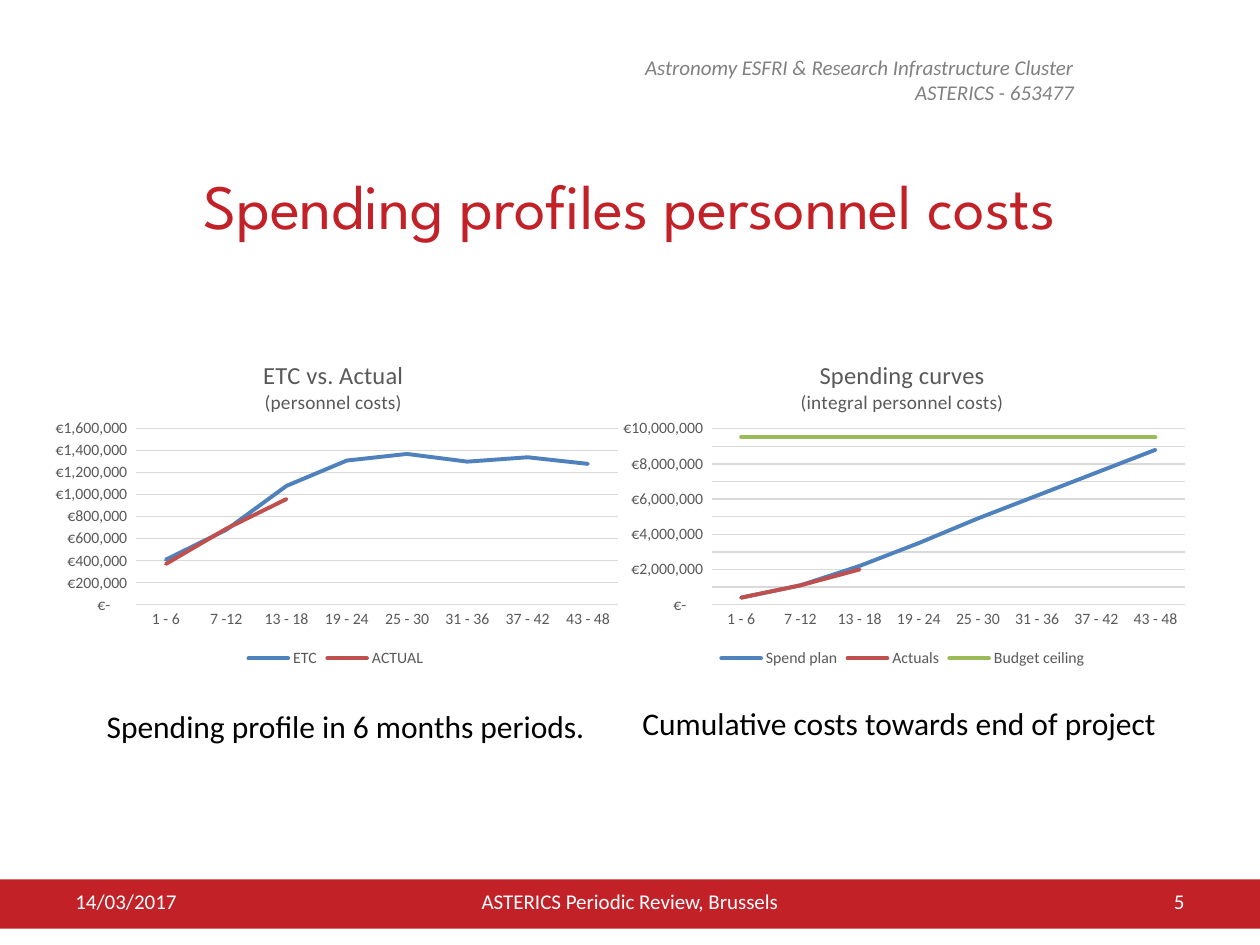
import pptx
import pptx.chart.data
import pptx.dml.color
import pptx.enum.chart
import pptx.enum.shapes
import pptx.enum.text
import pptx.oxml
import pptx.util
from pptx.util import Cm, Pt

THEME = {
    "red": "C32128",
    "grid": "D9D9D9",
    "series": ["4F81BD", "C0504D", "9BBB59"],
    "header": {"name": "Calibri", "size": Pt(12), "italic": True, "color": "808080"},
    "title": {"name": "League Spartan", "size": Pt(36), "color": "C32128"},
    "footer": {"name": "Calibri", "size": Pt(12), "color": "FFFFFF"},
    "caption": {"name": "Calibri", "size": Pt(18), "color": "000000"},
    "chart": {"name": "Calibri", "size": Pt(10), "color": "000000"},
    "label": {"name": "Calibri", "size": Pt(9), "color": "595959"},
    "chart title": {"name": "Calibri", "size": Pt(14), "bold": False, "color": "595959"},
    "chart subtitle": {"name": "Calibri", "size": Pt(11), "bold": False, "color": "595959"},
}
EURO_FORMAT = r'_("€"* #,##0_);_("€"* \(#,##0\);_("€"* "-"??_);_(@_)'
ALIGN = pptx.enum.text.PP_ALIGN
ANCHOR = pptx.enum.text.MSO_ANCHOR
XL = pptx.enum.chart
rgb = pptx.dml.color.RGBColor.from_string


def style_font(font, style):
    for key, value in THEME[style].items():
        if key == "color":
            font.color.rgb = rgb(value)
        else:
            setattr(font, key, value)


def layout_xml(target, **fractions):
    """Return a manual chart layout given as fractions of the chart area."""
    namespace = "http://schemas.openxmlformats.org/drawingml/2006/chart"
    parts = [("layoutTarget", target)] if target else []
    parts += [("xMode", "edge"), ("yMode", "edge"), *fractions.items()]
    inner = "".join(f'<c:{name} val="{value}"/>' for name, value in parts)
    return pptx.oxml.parse_xml(
        f'<c:layout xmlns:c="{namespace}"><c:manualLayout>{inner}</c:manualLayout></c:layout>')


deck = pptx.Presentation()
deck.slide_width, deck.slide_height = Cm(25.4), Cm(19.05)
page = deck.slides.add_slide(deck.slide_layouts[6])

# Footer band
band = page.shapes.add_shape(
    pptx.enum.shapes.MSO_SHAPE.RECTANGLE, 0, Cm(17.73), deck.slide_width, Cm(0.99))
band.shadow.inherit = False
band.fill.solid()
band.fill.fore_color.rgb = rgb(THEME["red"])
band.line.fill.background()

# Texts: style, lines, left, top, width, height, alignment, anchor
texts = [
    ("header", ["Astronomy ESFRI & Research Infrastructure Cluster", "ASTERICS - 653477"],
     11.1, 0.97, 10.8, 1.27, ALIGN.RIGHT, ANCHOR.TOP),
    ("title", ["Spending profiles personnel costs"],
     1.27, 2.92, 22.86, 2.39, ALIGN.CENTER, ANCHOR.MIDDLE),
    ("footer", ["14/03/2017"], 1.27, 17.65, 5.92, 1.02, ALIGN.LEFT, ANCHOR.MIDDLE),
    ("footer", ["ASTERICS Periodic Review, Brussels"],
     8.68, 17.65, 8.04, 1.02, ALIGN.CENTER, ANCHOR.MIDDLE),
    ("footer", ["5"], 18.21, 17.65, 5.92, 1.02, ALIGN.RIGHT, ANCHOR.MIDDLE),
    ("caption", ["Spending profile in 6 months periods."],
     1.9, 14.12, 10.8, 1.02, ALIGN.LEFT, ANCHOR.TOP),
    ("caption", ["Cumulative costs towards end of project"],
     12.7, 14.07, 11.81, 1.02, ALIGN.LEFT, ANCHOR.TOP),
]
for style, lines, left, top, width, height, alignment, anchor in texts:
    box = page.shapes.add_textbox(Cm(left), Cm(top), Cm(width), Cm(height))
    frame = box.text_frame
    frame.word_wrap = True
    frame.vertical_anchor = anchor
    frame.text = "\n".join(lines)
    for para in frame.paragraphs:
        para.alignment = alignment
        style_font(para.runs[0].font, style)

# Line charts
periods = ["1 - 6", "7 -12", "13 - 18", "19 - 24", "25 - 30", "31 - 36", "37 - 42", "43 - 48"]
to_come = [None] * 5
charts = [
    {"left": 0.84, "title": ["ETC vs. Actual", "(personnel costs)"], "title_x": 0.37,
     "plot_x": 0.16, "plot_w": 0.82, "top_value": 1600000, "step": 200000,
     "series": {
         "ETC": [410000, 680000, 1080000, 1310000, 1370000, 1300000, 1340000, 1280000],
         "ACTUAL": [370000, 690000, 960000] + to_come}},
    {"left": 12.27, "title": ["Spending curves", "(integral personnel costs)"], "title_x": 0.32,
     "plot_x": 0.175, "plot_w": 0.805, "top_value": 10000000, "step": 1000000,
     "series": {
         "Spend plan": [400000, 1100000, 2200000, 3500000, 4900000, 6200000, 7500000, 8800000],
         "Actuals": [400000, 1100000, 2000000] + to_come,
         "Budget ceiling": [9500000] * len(periods)}},
]
for entry in charts:
    data = pptx.chart.data.CategoryChartData(number_format=EURO_FORMAT)
    data.categories = periods
    for name, values in entry["series"].items():
        data.add_series(name, values)
    chart = page.shapes.add_chart(
        XL.XL_CHART_TYPE.LINE, Cm(entry["left"]), Cm(6.73), Cm(11.86), Cm(6.83), data).chart
    style_font(chart.font, "chart")

    title = chart.chart_title
    title.text_frame.text = "\n".join(entry["title"])
    for para, style in zip(title.text_frame.paragraphs, ["chart title", "chart subtitle"]):
        style_font(para.runs[0].font, style)
    title._element.get_or_add_tx().addnext(layout_xml(None, x=entry["title_x"], y=0.06))
    for old in title._element.findall("{*}layout")[1:]:
        title._element.remove(old)

    plot_area = chart._chartSpace.chart.plotArea
    for old in plot_area.findall("{*}layout"):
        plot_area.remove(old)
    plot_area.insert(0, layout_xml(
        "inner", x=entry["plot_x"], y=0.28, w=entry["plot_w"], h=0.52))

    chart.has_legend = True
    chart.legend.position = XL.XL_LEGEND_POSITION.BOTTOM
    chart.legend.include_in_layout = False
    style_font(chart.legend.font, "label")

    for axis in (chart.category_axis, chart.value_axis):
        axis.major_tick_mark = axis.minor_tick_mark = XL.XL_TICK_MARK.NONE
        style_font(axis.tick_labels.font, "label")
    value_axis = chart.value_axis
    value_axis.minimum_scale, value_axis.maximum_scale = 0, entry["top_value"]
    value_axis.major_unit = entry["step"]
    value_axis.tick_labels.number_format = EURO_FORMAT
    value_axis.tick_labels.number_format_is_linked = False
    value_axis.format.line.fill.background()
    for line in (chart.category_axis.format.line, value_axis.major_gridlines.format.line):
        line.color.rgb = rgb(THEME["grid"])
        line.width = Pt(0.75)

    for series, color in zip(chart.plots[0].series, THEME["series"]):
        series.smooth = False
        series.marker.style = XL.XL_MARKER_STYLE.NONE
        series.format.line.color.rgb = rgb(color)
        series.format.line.width = Pt(2.25)
        series.format.line._ln.set("cap", "rnd")
    chart.plots[0].vary_by_categories = False

deck.save("out.pptx")
